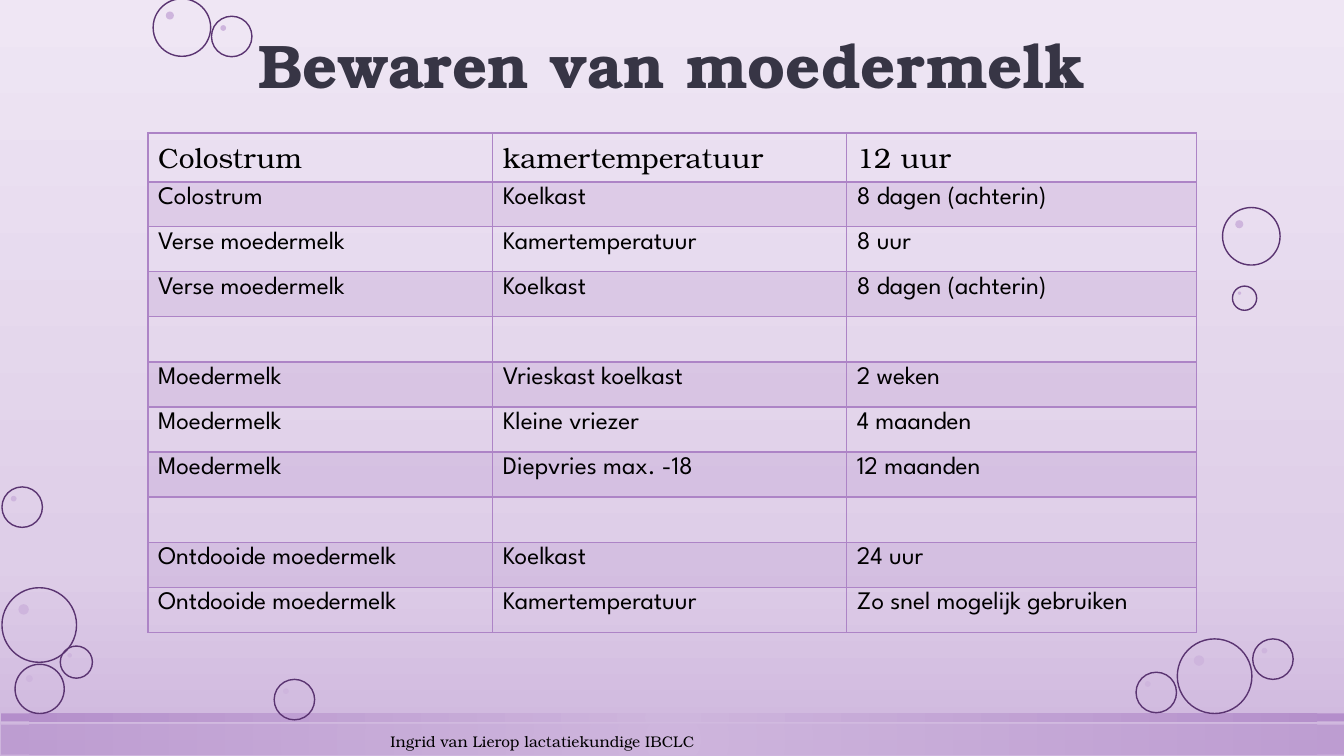
"""Build the slide about storing breast milk."""
from dataclasses import dataclass

from pptx import Presentation
from pptx.dml.color import RGBColor as Rgb
from pptx.enum.shapes import MSO_SHAPE as Shape
from pptx.enum.text import MSO_ANCHOR as Anchor, MSO_AUTO_SIZE as AutoSize, PP_ALIGN as Align
from pptx.oxml import parse_xml
from pptx.oxml.ns import nsdecls, qn
from pptx.util import Cm, Pt

TITLE = "Bewaren van moedermelk"
FOOTER = "Ingrid van Lierop lactatiekundige IBCLC"
STORAGE = [
    ("Colostrum", "kamertemperatuur", "12 uur"),
    ("Colostrum", "Koelkast", "8 dagen (achterin)"),
    ("Verse moedermelk", "Kamertemperatuur", "8 uur"),
    ("Verse moedermelk", "Koelkast", "8 dagen (achterin)"),
    ("", "", ""),
    ("Moedermelk", "Vrieskast koelkast", "2 weken"),
    ("Moedermelk", "Kleine vriezer", "4 maanden"),
    ("Moedermelk", "Diepvries max. -18", "12 maanden"),
    ("", "", ""),
    ("Ontdooide moedermelk", "Koelkast", "24 uur"),
    ("Ontdooide moedermelk", "Kamertemperatuur", "Zo snel mogelijk gebruiken"),
]
COLUMN_WIDTHS = (8.69, 8.92, 8.81)
HEADER_HEIGHT, ROW_HEIGHT = 1.23, 1.135
BUBBLES = [
    (0.05, 14.81, 1.88), (1.52, 16.28, 0.81), (0.38, 16.74, 1.24),
    (6.91, 17.12, 1.02), (0.05, 12.27, 1.02), (29.67, 16.1, 1.88),
    (28.63, 16.94, 1.02), (31.57, 16.1, 1.02), (30.81, 5.23, 1.45),
    (31.06, 7.21, 0.61), (3.86, -0.03, 1.45), (5.33, 0.41, 1.02),
]
GLINT_OFFSET, GLINT_SIZE = 0.22, 0.14
BANDS = [(18.26, 0.76, 50), (17.98, 0.2, 80)]
SLIDE_WIDTH, SLIDE_HEIGHT = 33.87, 19.05
CONTENT_LEFT, CONTENT_WIDTH = 3.73, 26.42


@dataclass(frozen=True)
class Theme:
    """Colours, fonts and type sizes."""
    pale: str = "EFE6F4"
    mist: str = "DECEE8"
    lilac: str = "CEB5DD"
    violet: str = "AD84C6"
    plum: str = "5A3471"
    heading: str = "373545"
    ink: str = "000000"
    serif: str = "TeX Gyre Bonum"
    sans: str = "League Spartan"
    title_size: int = 44
    header_size: int = 20
    body_size: int = 18
    footer_size: int = 11


THEME = Theme()


def apply(target, **values):
    """Set each given attribute."""
    for key, value in values.items():
        setattr(target, key, value)


def box(left, top, width, height):
    """Convert a box in centimetres."""
    return Cm(left), Cm(top), Cm(width), Cm(height)


def write(frame, text, color, align=Align.LEFT, spacing=None, **font):
    """Write one formatted paragraph."""
    paragraph = frame.paragraphs[0]
    apply(paragraph, alignment=align, line_spacing=spacing)
    words = paragraph.add_run()
    words.text = text
    apply(words.font, **font)
    words.font.color.rgb = Rgb.from_string(color)


def paint_gradient(fill, owner, stops, direction):
    """Fill with stops of position, colour and opacity."""
    fill.gradient()
    gradient = owner.find(".//" + qn("a:gradFill"))
    for part in list(gradient):
        gradient.remove(part)
    marks = "".join(
        f'<a:gs pos="{place * 1000}"><a:srgbClr val="{color}">'
        f'<a:alpha val="{opacity * 1000}"/></a:srgbClr></a:gs>'
        for place, color, opacity in stops)
    gradient.append(parse_xml(f'<a:gsLst {nsdecls("a")}>{marks}</a:gsLst>'))
    gradient.append(parse_xml(direction))


def paint_solid(fill, color):
    """Fill with one colour."""
    fill.solid()
    fill.fore_color.rgb = Rgb.from_string(color)


def add_plain(slide, kind, *place):
    """Add a shape without shadow, fill or line."""
    shape = slide.shapes.add_shape(kind, *box(*place))
    shape.shadow.inherit = False
    shape.fill.background()
    shape.line.fill.background()
    return shape


def add_backdrop(slide):
    """Paint the background, bands and bubbles."""
    downward = f'<a:lin {nsdecls("a")} ang="5400000" scaled="0"/>'
    outward = (f'<a:path {nsdecls("a")} path="circle">'
               '<a:fillToRect l="50000" t="50000" r="50000" b="50000"/></a:path>')
    shades = [(0, THEME.pale, 100), (74, THEME.mist, 100), (100, THEME.lilac, 100)]
    paint_gradient(slide.background.fill, slide.element, shades, downward)
    for top, height, opacity in BANDS:
        band = add_plain(slide, Shape.RECTANGLE, 0.03, top, SLIDE_WIDTH, height)
        shades = [(0, THEME.lilac, opacity), (100, THEME.violet, opacity)]
        paint_gradient(band.fill, band.element, shades, outward)
    for left, top, size in BUBBLES:
        bubble = add_plain(slide, Shape.OVAL, left, top, size, size)
        paint_solid(bubble.line.fill, THEME.plum)
        bubble.line.width = Pt(1)
        offset, spot = size * GLINT_OFFSET, size * GLINT_SIZE
        glint = add_plain(slide, Shape.OVAL, left + offset, top + offset, spot, spot)
        paint_solid(glint.fill, THEME.lilac)


def add_borders(cell, widths):
    """Draw the four cell borders."""
    for side, width in widths.items():
        cell._tc.get_or_add_tcPr().append(parse_xml(
            f'<a:ln{side} {nsdecls("a")} w="{Pt(width)}"><a:solidFill>'
            f'<a:srgbClr val="{THEME.violet}"/></a:solidFill></a:ln{side}>'))


def add_storage(slide):
    """Add the table of storage times."""
    height = HEADER_HEIGHT + ROW_HEIGHT * (len(STORAGE) - 1)
    storage = slide.shapes.add_table(
        len(STORAGE), len(COLUMN_WIDTHS),
        *box(CONTENT_LEFT, 3.35, CONTENT_WIDTH, height)).table
    apply(storage, first_row=False, horz_banding=False)
    for column, width in zip(storage.columns, COLUMN_WIDTHS):
        column.width = Cm(width)
    header_font = dict(name=THEME.serif, size=Pt(THEME.header_size))
    body_font = dict(name=THEME.sans, size=Pt(THEME.body_size))
    for index, entries in enumerate(STORAGE):
        storage.rows[index].height = Cm(ROW_HEIGHT if index else HEADER_HEIGHT)
        for cell, entry in zip(storage.rows[index].cells, entries):
            add_borders(cell, {"L": 1, "R": 1, "T": 2 if index == 1 else 1,
                               "B": 1 if index else 2})
            if index % 2:
                paint_solid(cell.fill, THEME.violet)
                tint = cell._tc.tcPr.find(qn("a:solidFill"))[0]
                tint.append(parse_xml(f'<a:alpha {nsdecls("a")} val="20000"/>'))
            else:
                cell.fill.background()
            if entry:
                write(cell.text_frame, entry, THEME.ink,
                      **(body_font if index else header_font))


def main():
    """Assemble and save the slide."""
    deck = Presentation()
    apply(deck, slide_width=Cm(SLIDE_WIDTH), slide_height=Cm(SLIDE_HEIGHT))
    slide = deck.slides.add_slide(deck.slide_layouts[5])
    add_backdrop(slide)
    title = slide.shapes.title
    apply(title, left=Cm(CONTENT_LEFT), top=Cm(0.43),
          width=Cm(CONTENT_WIDTH), height=Cm(2.26))
    apply(title.text_frame, vertical_anchor=Anchor.BOTTOM,
          auto_size=AutoSize.NONE, word_wrap=True)
    write(title.text_frame, TITLE, THEME.heading, Align.CENTER, 0.9,
          name=THEME.serif, size=Pt(THEME.title_size), bold=True)
    add_storage(slide)
    footer = slide.shapes.add_textbox(*box(CONTENT_LEFT, 18.34, 19.89, 0.66)).text_frame
    apply(footer, vertical_anchor=Anchor.MIDDLE, word_wrap=True)
    write(footer, FOOTER, THEME.ink, Align.CENTER,
          name=THEME.serif, size=Pt(THEME.footer_size))
    deck.save("out.pptx")


if __name__ == "__main__":
    main()
